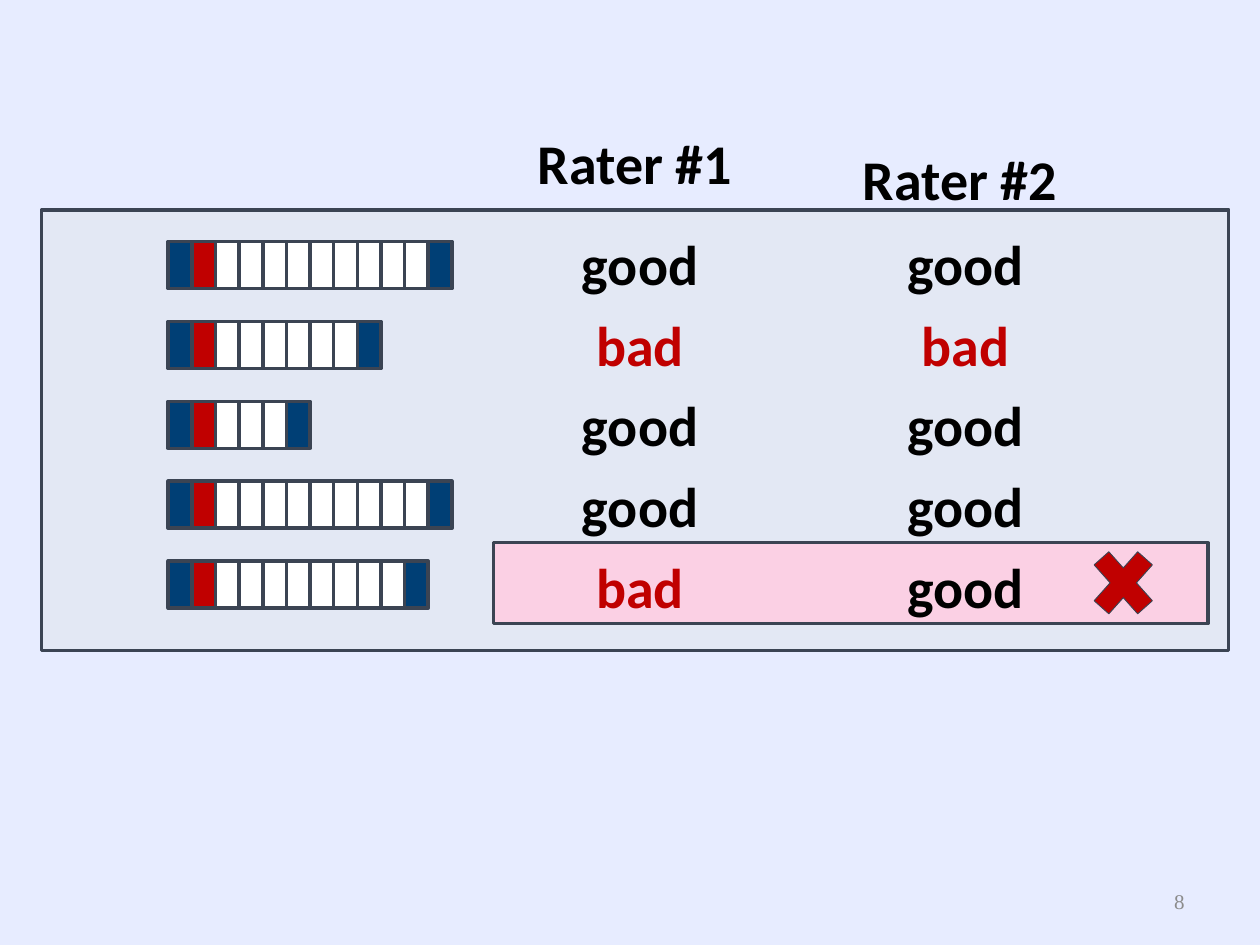
from pptx import Presentation
from pptx.dml.color import RGBColor
from pptx.enum.shapes import MSO_SHAPE
from pptx.enum.text import MSO_ANCHOR, MSO_AUTO_SIZE, PP_ALIGN
from pptx.util import Cm, Pt

PALE = RGBColor(0xE7, 0xEC, 0xFF)
PANEL = RGBColor(0xE3, 0xE8, 0xF4)
SLATE = RGBColor(0x3B, 0x44, 0x53)
NAVY = RGBColor(0x00, 0x3F, 0x75)
RED = RGBColor(0xC0, 0x00, 0x00)
WHITE = RGBColor(0xFF, 0xFF, 0xFF)
PINK = RGBColor(0xFB, 0xD0, 0xE4)
BLACK = RGBColor(0x00, 0x00, 0x00)
GREY = RGBColor(0x8C, 0x8C, 0x8C)

WHITES = [9, 6, 3, 9, 8]  # white cells in each bar
CELL = Cm(5.72) / 12
LABEL = {"size": Pt(32), "name": "Calibri", "bold": True}
NUMBER = {"size": Pt(12), "name": "Times New Roman", "bold": False}


def add_form(shapes, kind, box, fill, weight=2):
    """Add a filled, outlined shape."""
    form = shapes.add_shape(kind, *box)
    form.shadow.inherit = False
    form.fill.solid()
    form.fill.fore_color.rgb = fill
    form.line.color.rgb = SLATE
    form.line.width = Pt(weight)


def add_bar(slide, top, whites):
    """Add one grouped bar: navy, red, white cells, navy."""
    group = slide.shapes.add_group_shape()
    fills = [NAVY, RED] + [WHITE] * whites + [NAVY]
    for i, fill in enumerate(fills):
        box = Cm(3.39) + round(i * CELL), top, round(CELL), Cm(0.95)
        add_form(group.shapes, MSO_SHAPE.RECTANGLE, box, fill)


def add_text(slide, box, lines, style, frame=None, para=None):
    """Add a text box from (text, colour) lines."""
    body = slide.shapes.add_textbox(*map(Cm, box)).text_frame
    settings = {"word_wrap": True, "auto_size": MSO_AUTO_SIZE.SHAPE_TO_FIT_TEXT}
    for key, value in (settings | (frame or {})).items():
        setattr(body, key, value)
    for i, (text, colour) in enumerate(lines):
        line = body.add_paragraph() if i else body.paragraphs[0]
        for key, value in ({"alignment": PP_ALIGN.CENTER} | (para or {})).items():
            setattr(line, key, value)
        run = line.add_run()
        run.text = text
        run.font.color.rgb = colour
        for key, value in style.items():
            setattr(run.font, key, value)


def add_votes(slide, box, votes):
    """Add a rater's column, with bad votes in red."""
    lines = [(vote, RED if vote == "bad" else BLACK) for vote in votes.split()]
    add_text(slide, box, lines, LABEL, para={"line_spacing": 1.2})


def main():
    deck = Presentation()
    deck.slide_width, deck.slide_height = Cm(25.4), Cm(19.05)
    slide = deck.slides.add_slide(deck.slide_layouts[6])
    slide.background.fill.solid()
    slide.background.fill.fore_color.rgb = PALE
    shapes = slide.shapes

    # Panel and the row where the raters disagree
    add_form(shapes, MSO_SHAPE.RECTANGLE,
             map(Cm, (0.84, 4.23, 23.93, 8.89)), PANEL)
    add_form(shapes, MSO_SHAPE.RECTANGLE,
             map(Cm, (9.95, 10.94, 14.4, 1.63)), PINK)

    # Bars
    for row, whites in enumerate(WHITES):
        add_bar(slide, Cm(4.87 + row * 1.61), whites)

    # Raters and their votes
    tight = {"word_wrap": False}
    add_text(slide, (10.57, 2.46, 4.47, 1.63), [("Rater #1", BLACK)],
             LABEL, tight)
    add_text(slide, (17.12, 2.11, 4.47, 2.31), [("Rater #2", BLACK)],
             LABEL, tight, {"line_spacing": 1.5})
    add_votes(slide, (10.58, 4.23, 4.65, 8.36), "good bad good good bad")
    add_votes(slide, (17.14, 4.23, 4.65, 8.46), "good bad good good good")

    # Cross on the mismatch
    add_form(shapes, MSO_SHAPE.MATH_MULTIPLY,
             map(Cm, (21.8, 10.8, 1.69, 1.9)), RED, 0.5)

    # Slide number
    add_text(slide, (18.2, 17.66, 5.93, 1.01), [("8", GREY)], NUMBER,
             {"auto_size": MSO_AUTO_SIZE.NONE,
              "vertical_anchor": MSO_ANCHOR.MIDDLE},
             {"alignment": PP_ALIGN.RIGHT})

    deck.save("out.pptx")


if __name__ == "__main__":
    main()
